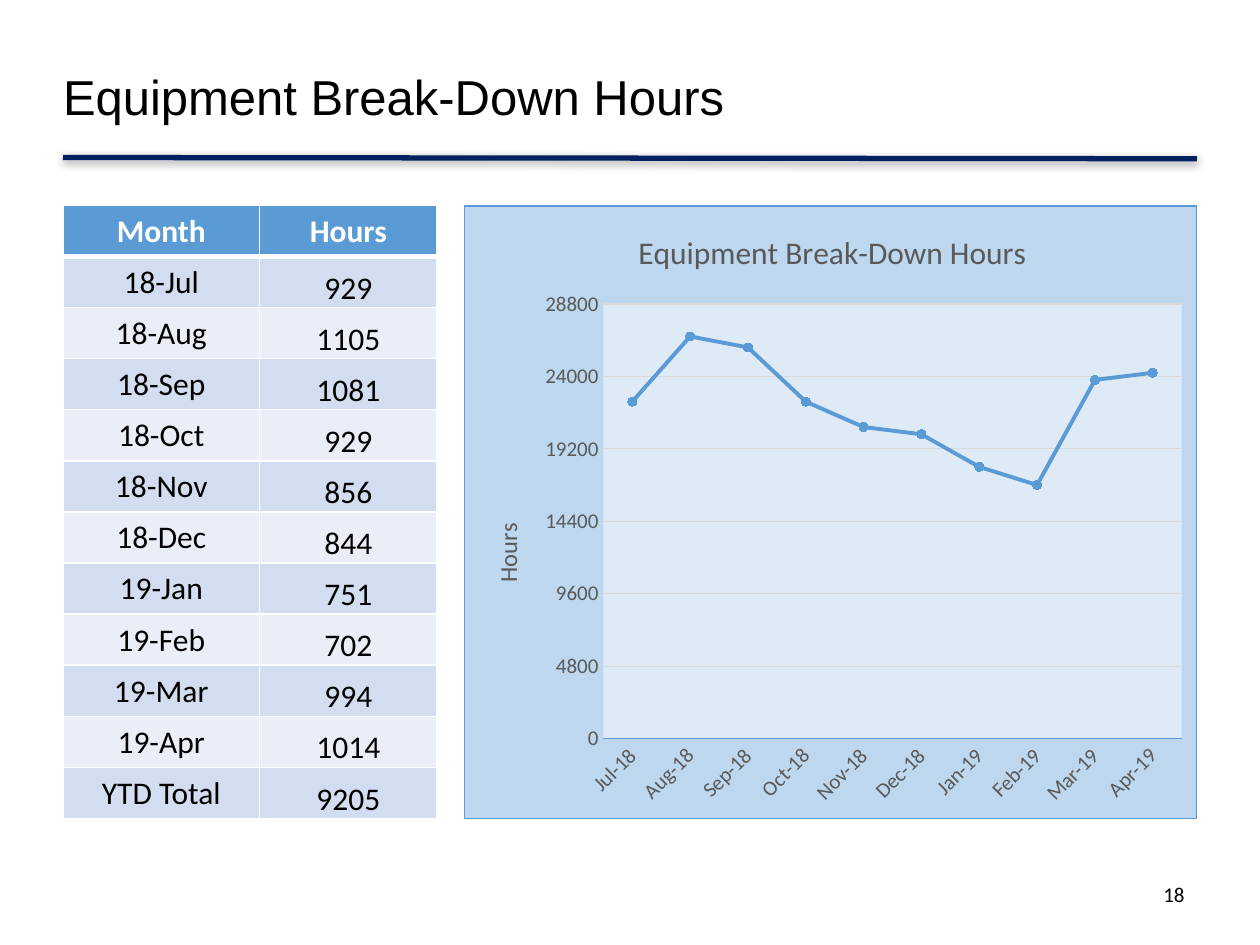
from lxml.etree import SubElement
from pptx import Presentation
from pptx.chart.data import CategoryChartData
from pptx.dml.color import RGBColor
from pptx.enum.chart import XL_CHART_TYPE, XL_MARKER_STYLE, XL_TICK_MARK
from pptx.enum.shapes import MSO_CONNECTOR
from pptx.enum.text import MSO_ANCHOR, PP_ALIGN
from pptx.oxml import parse_xml
from pptx.oxml.ns import nsdecls, qn
from pptx.util import Inches, Pt

TITLE = "Equipment Break-Down Hours"
PAGE = "18"
HEADER = ("Month", "Hours")
# month label, spreadsheet date number, hours
MONTHS = [
    ("18-Jul", 43282, 929), ("18-Aug", 43313, 1105), ("18-Sep", 43344, 1081),
    ("18-Oct", 43374, 929), ("18-Nov", 43405, 856), ("18-Dec", 43435, 844),
    ("19-Jan", 43466, 751), ("19-Feb", 43497, 702), ("19-Mar", 43525, 994),
    ("19-Apr", 43556, 1014),
]
TOTAL = ("YTD Total", sum(hours for _, _, hours in MONTHS))

THEME = {
    "head_font": "Arial", "body_font": "Calibri",
    "title": 28, "table": 18, "chart_title": 18, "axis_title": 14, "small": 12,
    "black": "000000", "white": "FFFFFF", "navy": "002060", "blue": "5B9BD5",
    "grey": "595959", "grid": "D9D9D9", "chart_bg": "BDD7EE", "plot_bg": "DEEBF7",
    "bands": ("D2DEEF", "EAEFF7"),
}
LEFT, RIGHT, TOP, HEIGHT = 0.5, 9.5, 1.63, 4.87
COLUMNS = (1.56, 1.41)
CHART_LEFT = 3.68


def rgb(value):
    return RGBColor.from_string(value)


def set_font(font, size, color, name=THEME["body_font"], bold=False):
    font.name, font.size, font.bold = name, Pt(size), bold
    font.color.rgb = rgb(color)


def write(tf, text, size, color=THEME["black"], align=PP_ALIGN.LEFT, **font):
    p = tf.paragraphs[0]
    p.alignment = align
    r = p.add_run()
    r.text = str(text)
    set_font(r.font, size, color, **font)
    return p


def set_line(line, color, width):
    line.color.rgb = rgb(color)
    line.width = Pt(width)


def add_solid(parent, color):
    SubElement(SubElement(parent, qn("a:solidFill")), qn("a:srgbClr"), val=color)


def add_fill(element, color):
    """Give a chart part a solid fill, ahead of any outline."""
    pr = parse_xml(f"<c:spPr {nsdecls('c', 'a')}/>")
    if element.tag == qn("c:plotArea"):
        element.append(pr)
    else:
        element.find(qn("c:chart")).addnext(pr)
    add_solid(pr, color)
    return pr


def set_borders(cell, color, bottom):
    """Outline a cell at 1 pt, with its own width for the lower edge."""
    pr = cell._tc.get_or_add_tcPr()
    for i, (side, width) in enumerate((("L", 1), ("R", 1), ("T", 1), ("B", bottom))):
        line = parse_xml(f'<a:ln{side} {nsdecls("a")} w="{Pt(width)}"/>')
        add_solid(line, color)
        pr.insert(i, line)


def place(element, x, y, w=None, h=None):
    """Fix a chart part at fractions of the chart's size."""
    for old in element.findall(qn("c:layout")):
        element.remove(old)
    layout = parse_xml(f"<c:layout {nsdecls('c')}><c:manualLayout/></c:layout>")
    rules = [("xMode", "edge"), ("yMode", "edge"), ("x", x), ("y", y)]
    if w:
        rules = [("layoutTarget", "inner")] + rules + [("w", w), ("h", h)]
    for tag, value in rules:
        SubElement(layout[0], qn(f"c:{tag}"), val=str(value))
    text = element.find(qn("c:tx"))
    if text is None:
        element.insert(0, layout)
    else:
        text.addnext(layout)


def add_rule(s):
    rule = s.shapes.add_connector(MSO_CONNECTOR.STRAIGHT, Inches(LEFT), Inches(1.25),
                                  Inches(RIGHT), Inches(1.26))
    set_line(rule.line, THEME["navy"], 3)
    rule._element.spPr.append(parse_xml(
        f'<a:effectLst {nsdecls("a")}><a:outerShdw blurRad="{Pt(5)}" dist="{Pt(1.6)}" '
        'dir="5400000" rotWithShape="0"><a:srgbClr val="000000"><a:alpha val="38000"/>'
        '</a:srgbClr></a:outerShdw></a:effectLst>'))


def add_hours_table(s):
    rows = [HEADER] + [(label, hours) for label, _, hours in MONTHS] + [TOTAL]
    table = s.shapes.add_table(len(rows), len(COLUMNS), Inches(LEFT), Inches(TOP),
                               Inches(sum(COLUMNS)), Inches(HEIGHT)).table
    for column, width in zip(table.columns, COLUMNS):
        column.width = Inches(width)
    for i, row in enumerate(rows):
        table.rows[i].height = Inches(HEIGHT / len(rows))
        head = i == 0
        for j, text in enumerate(row):
            cell = table.cell(i, j)
            cell.fill.solid()
            cell.fill.fore_color.rgb = rgb(THEME["blue"] if head else THEME["bands"][(i - 1) % 2])
            if head:
                set_borders(cell, THEME["white"], bottom=3)
            cell.margin_left = cell.margin_right = cell.margin_top = Inches(0.01)
            cell.margin_bottom = 0
            cell.vertical_anchor = MSO_ANCHOR.MIDDLE if head or j == 0 else MSO_ANCHOR.BOTTOM
            write(cell.text_frame, text, THEME["table"], align=PP_ALIGN.CENTER, bold=head,
                  color=THEME["white"] if head else THEME["black"])


def add_hours_chart(s):
    data = CategoryChartData()
    data.categories = [date for _, date, _ in MONTHS]
    data.categories.number_format = "mmm-yy"
    data.add_series("Series 1", [(hours + 5) // 10 * 10 for _, _, hours in MONTHS])
    chart = s.shapes.add_chart(XL_CHART_TYPE.LINE_MARKERS, Inches(CHART_LEFT), Inches(TOP),
                               Inches(RIGHT - CHART_LEFT), Inches(HEIGHT), data).chart
    chart.has_legend = False
    set_font(chart.font, 10, THEME["black"])
    write(chart.chart_title.text_frame, TITLE, THEME["chart_title"], THEME["grey"])
    chart.chart_title.include_in_layout = False

    cat, val = chart.category_axis, chart.value_axis
    for axis, code in ((cat, "mmm-yy"), (val, "[h];@\\ ")):
        axis.major_tick_mark = axis.minor_tick_mark = XL_TICK_MARK.NONE
        set_font(axis.tick_labels.font, THEME["small"], THEME["grey"])
        axis.tick_labels.number_format = code
        axis.tick_labels.number_format_is_linked = False
    set_line(cat.format.line, THEME["blue"], 0.75)
    cat._element.find(qn("c:txPr")).find(qn("a:bodyPr")).set("rot", "-2700000")

    val.minimum_scale, val.maximum_scale, val.major_unit = 0, 1200, 200
    val.format.line.fill.background()
    set_line(val.major_gridlines.format.line, THEME["grid"], 0.75)
    write(val.axis_title.text_frame, HEADER[1], THEME["axis_title"], THEME["grey"])
    body = val.axis_title.text_frame._txBody.bodyPr
    body.set("rot", "-5400000")
    body.set("vert", "horz")

    plot = chart.plots[0]
    plot.vary_by_categories = False
    line = plot.series[0]
    line.smooth = False
    set_line(line.format.line, THEME["blue"], 2.25)
    line.marker.style, line.marker.size = XL_MARKER_STYLE.CIRCLE, 5
    line.marker.format.fill.solid()
    line.marker.format.fill.fore_color.rgb = rgb(THEME["blue"])
    set_line(line.marker.format.line, THEME["blue"], 0.75)

    space = chart._chartSpace
    plot_area = space.chart.plotArea
    add_fill(plot_area, THEME["plot_bg"])
    border = SubElement(add_fill(space, THEME["chart_bg"]), qn("a:ln"), w=str(Pt(0.75)))
    add_solid(border, THEME["blue"])
    place(plot_area, 0.19, 0.16, 0.79, 0.71)
    place(chart.chart_title._element, 0.23, 0.03)
    place(val.axis_title._element, 0.03, 0.51)


def main():
    prs = Presentation()
    prs.slide_width, prs.slide_height = Inches(10), Inches(7.5)
    s = prs.slides.add_slide(prs.slide_layouts[5])
    add_rule(s)

    title = s.shapes.title
    title.left, title.top, title.width, title.height = map(Inches, (LEFT, 0.33, 6.86, 0.92))
    tf = title.text_frame
    tf.margin_left = tf.margin_right = tf.margin_top = tf.margin_bottom = 0
    tf.vertical_anchor = MSO_ANCHOR.MIDDLE
    write(tf, TITLE, THEME["title"], name=THEME["head_font"]).line_spacing = 0.9

    add_hours_table(s)
    page = s.shapes.add_textbox(Inches(7.17), Inches(6.95), Inches(2.33), Inches(0.4))
    page.text_frame.word_wrap = True
    write(page.text_frame, PAGE, THEME["small"], align=PP_ALIGN.RIGHT)
    add_hours_chart(s)
    prs.save("out.pptx")


if __name__ == "__main__":
    main()
